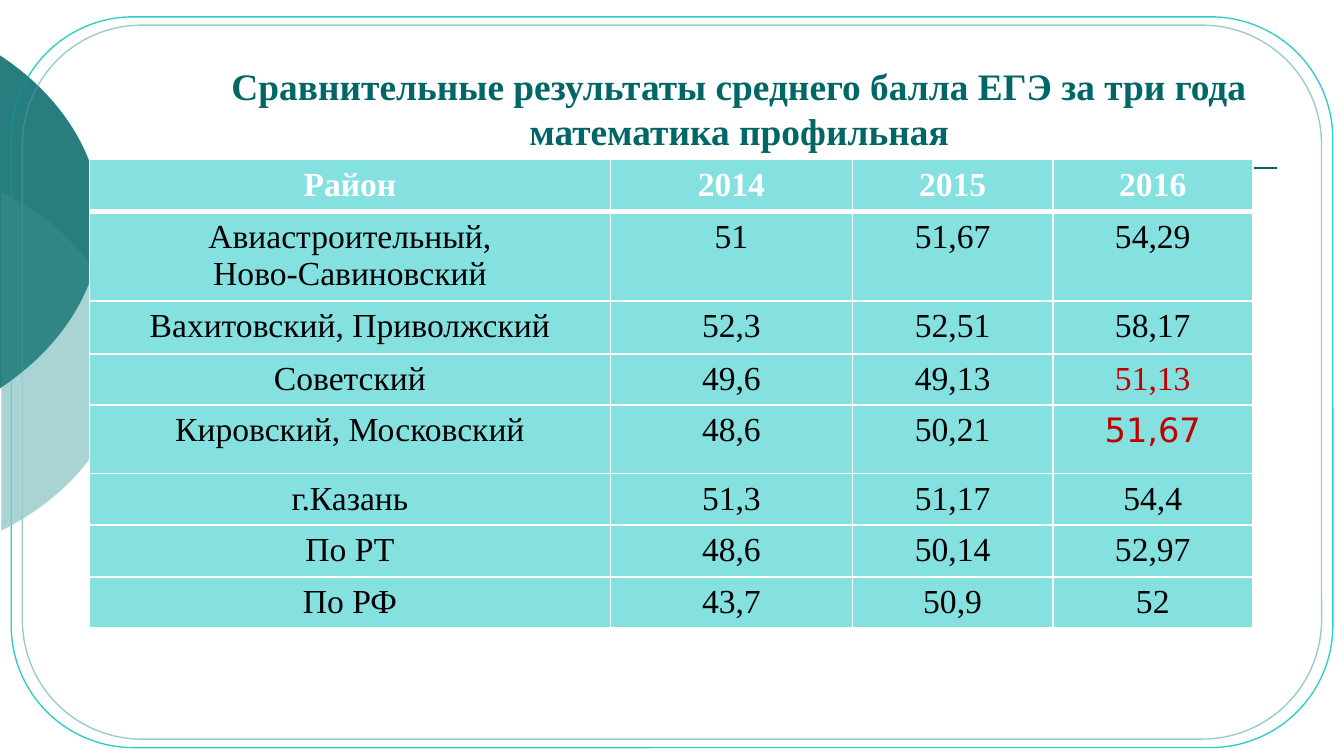
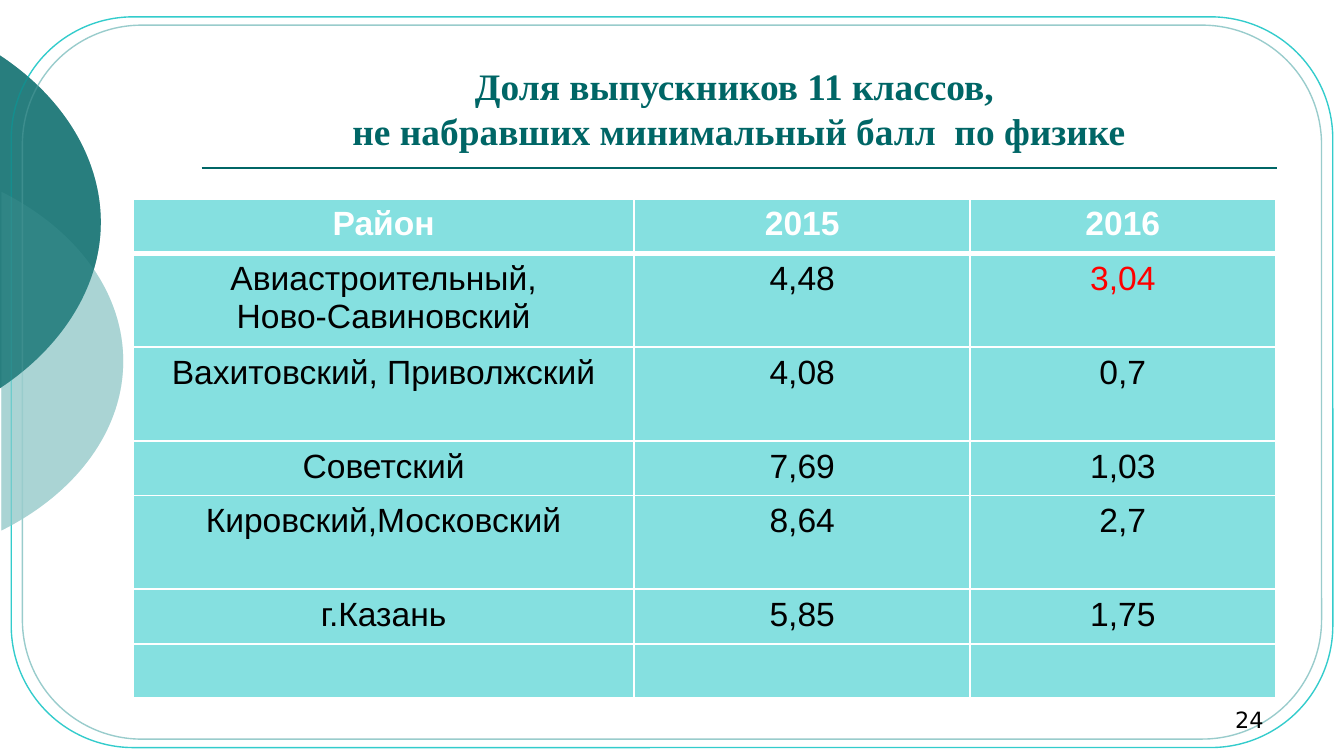
"""Build two slides comparing exam results by district."""
from lxml.etree import SubElement
from pptx import Presentation
from pptx.dml.color import RGBColor
from pptx.enum.shapes import MSO_CONNECTOR, MSO_SHAPE
from pptx.enum.text import MSO_ANCHOR, MSO_AUTO_SIZE, PP_ALIGN
from pptx.oxml import parse_xml
from pptx.oxml.ns import nsdecls, qn
from pptx.util import Pt

PX = 9525
TEAL = RGBColor(0x00, 0x66, 0x66)
PALE_TEAL = RGBColor(0x99, 0xCC, 0xCC)
TURQUOISE = RGBColor(0x33, 0xCC, 0xCC)
CELL_FILL = RGBColor(0x85, 0xE0, 0xE0)
WHITE = RGBColor(0xFF, 0xFF, 0xFF)
BLACK = RGBColor(0x00, 0x00, 0x00)
DARK_RED = RGBColor(0xC0, 0x00, 0x00)
RED = RGBColor(0xFF, 0x00, 0x00)
SERIF, SANS, NUMBER_FONT = "Times New Roman", "Arial", "DejaVu Sans"

DISCS = [
    (PALE_TEAL, 58, (-296, 114, 384, 288),
     [(1, 137), (55, 164), (88, 209), (88, 258), (88, 307), (55, 352), (1, 379)]),
    (TEAL, 60, (-352, 0, 424, 318),
     [(-1, 39), (45, 69), (72, 113), (72, 159), (72, 204), (45, 248), (-1, 278)]),
]
FRAMES = [(TURQUOISE, (8, 12, 944, 522)), (PALE_TEAL, (16, 18, 928, 510))]

SLIDES = [
    {
        "title": "Сравнительные результаты среднего балла ЕГЭ за три года математика профильная",
        "font": SERIF,
        "corner": (64, 114),
        "columns": [372, 173, 143, 143],
        "heights": [37, 64, 38, 36, 49, 37, 37, 36],
        "rows": [
            ["Район", "2014", "2015", "2016"],
            ["Авиастроительный,\nНово-Савиновский", "51", "51,67", "54,29"],
            ["Вахитовский, Приволжский", "52,3", "52,51", "58,17"],
            ["Советский", "49,6", "49,13", "51,13"],
            ["Кировский, Московский", "48,6", "50,21", "51,67"],
            ["г.Казань", "51,3", "51,17", "54,4"],
            ["По РТ", "48,6", "50,14", "52,97"],
            ["По РФ", "43,7", "50,9", "52"],
        ],
        "accents": {(3, 3): {"color": DARK_RED}, (4, 3): {"color": DARK_RED, "font": NUMBER_FONT}},
        "number": None,
    },
    {
        "title": "Доля выпускников 11 классов, \vне набравших минимальный балл  по физике",
        "font": SANS,
        "corner": (95, 142),
        "columns": [358, 240, 218],
        "heights": [39, 67, 67, 39, 67, 39, 39],
        "rows": [
            ["Район", "2015", "2016"],
            ["Авиастроительный,\nНово-Савиновский", "4,48", "3,04"],
            ["Вахитовский, Приволжский", "4,08", "0,7"],
            ["Советский", "7,69", "1,03"],
            ["Кировский,Московский", "8,64", "2,7"],
            ["г.Казань", "5,85", "1,75"],
            ["", "", ""],
        ],
        "accents": {(1, 2): {"color": RED}},
        "number": "24",
    },
]


def write(frame, text, font=SERIF, size=18, color=BLACK, bold=False, align=PP_ALIGN.CENTER):
    for index, line in enumerate(text.split("\n")):
        para = frame.add_paragraph() if index else frame.paragraphs[0]
        para.alignment = align
        para.text = line
        for span in para.runs:
            span.font.name = font
            span.font.size = Pt(size)
            span.font.bold = bold
            span.font.color.rgb = color
        for line_break in para._p.findall(qn("a:br")):
            SubElement(line_break, qn("a:rPr")).set("sz", str(size * 100))


def draw_discs(page):
    for color, opacity, (left, top, width, height), points in DISCS:
        right, bottom = left + width, top + height
        builder = page.shapes.build_freeform(left, top, scale=PX)
        builder.add_line_segments([(right, top), (right, bottom), (left, bottom)], close=True)
        disc = builder.convert_to_shape()
        outline = disc.element.spPr.xpath(".//a:path")[0]
        for segment in list(outline):
            outline.remove(segment)
        for name, group in (("moveTo", points[:1]), ("cubicBezTo", points[1:4]),
                            ("cubicBezTo", points[4:]), ("close", [])):
            segment = SubElement(outline, qn(f"a:{name}"))
            for x, y in group:
                point = SubElement(segment, qn("a:pt"))
                point.set("x", str(x - left))
                point.set("y", str(y - top))
        disc.shadow.inherit = False
        disc.fill.solid()
        disc.fill.fore_color.rgb = color
        tint = disc.element.spPr.xpath(".//a:srgbClr")[0]
        SubElement(tint, qn("a:alpha")).set("val", str(opacity * 1000))
        disc.line.fill.background()


deck = Presentation()
deck.slide_width, deck.slide_height = 960 * PX, 540 * PX

for content in SLIDES:
    page = deck.slides.add_slide(deck.slide_layouts[5])

    draw_discs(page)
    for color, area in FRAMES:
        border = page.shapes.add_shape(
            MSO_SHAPE.ROUNDED_RECTANGLE, *(length * PX for length in area))
        border.adjustments[0] = 0.167
        border.shadow.inherit = False
        border.fill.background()
        border.line.color.rgb = color
        border.line.width = Pt(0.75)
    rule = page.shapes.add_connector(
        MSO_CONNECTOR.STRAIGHT, 144 * PX, 120 * PX, 912 * PX, 120 * PX)
    rule.line.color.rgb = TEAL
    rule.line.width = Pt(1)
    SubElement(rule.element.spPr, qn("a:effectLst"))
    draw_discs(page)

    title = page.shapes.title
    title.left, title.top, title.width, title.height = 144 * PX, 24 * PX, 768 * PX, 90 * PX
    title.text_frame.auto_size = MSO_AUTO_SIZE.NONE
    title.text_frame.vertical_anchor = MSO_ANCHOR.BOTTOM
    write(title.text_frame, content["title"], size=20, color=TEAL, bold=True)

    rows, columns, heights = content["rows"], content["columns"], content["heights"]
    left, top = content["corner"]
    table = page.shapes.add_table(
        len(rows), len(columns), left * PX, top * PX,
        sum(columns) * PX, sum(heights) * PX).table
    table.horz_banding = False
    for column, width in zip(table.columns, columns):
        column.width = width * PX
    for row_index, values in enumerate(rows):
        table.rows[row_index].height = heights[row_index] * PX
        header = row_index == 0
        for column_index, value in enumerate(values):
            cell = table.cell(row_index, column_index)
            style = {"font": content["font"], "color": WHITE if header else BLACK, "bold": header}
            style.update(content["accents"].get((row_index, column_index), {}))
            write(cell.text_frame, value, **style)
            properties = cell._tc.get_or_add_tcPr()
            for side in "LRTB":
                thick = (row_index, side) in ((0, "B"), (1, "T"))
                properties.append(parse_xml(
                    f'<a:ln{side} {nsdecls("a")} w="{Pt(3 if thick else 1)}"><a:solidFill>'
                    f'<a:srgbClr val="{WHITE}"/></a:solidFill></a:ln{side}>'))
            cell.fill.solid()
            cell.fill.fore_color.rgb = CELL_FILL

    if content["number"]:
        box = page.shapes.add_textbox(688 * PX, 492 * PX, 224 * PX, 36 * PX)
        box.text_frame.word_wrap = True
        box.text_frame.vertical_anchor = MSO_ANCHOR.BOTTOM
        write(box.text_frame, content["number"], font=NUMBER_FONT, size=12, align=PP_ALIGN.RIGHT)

deck.save("out.pptx")
